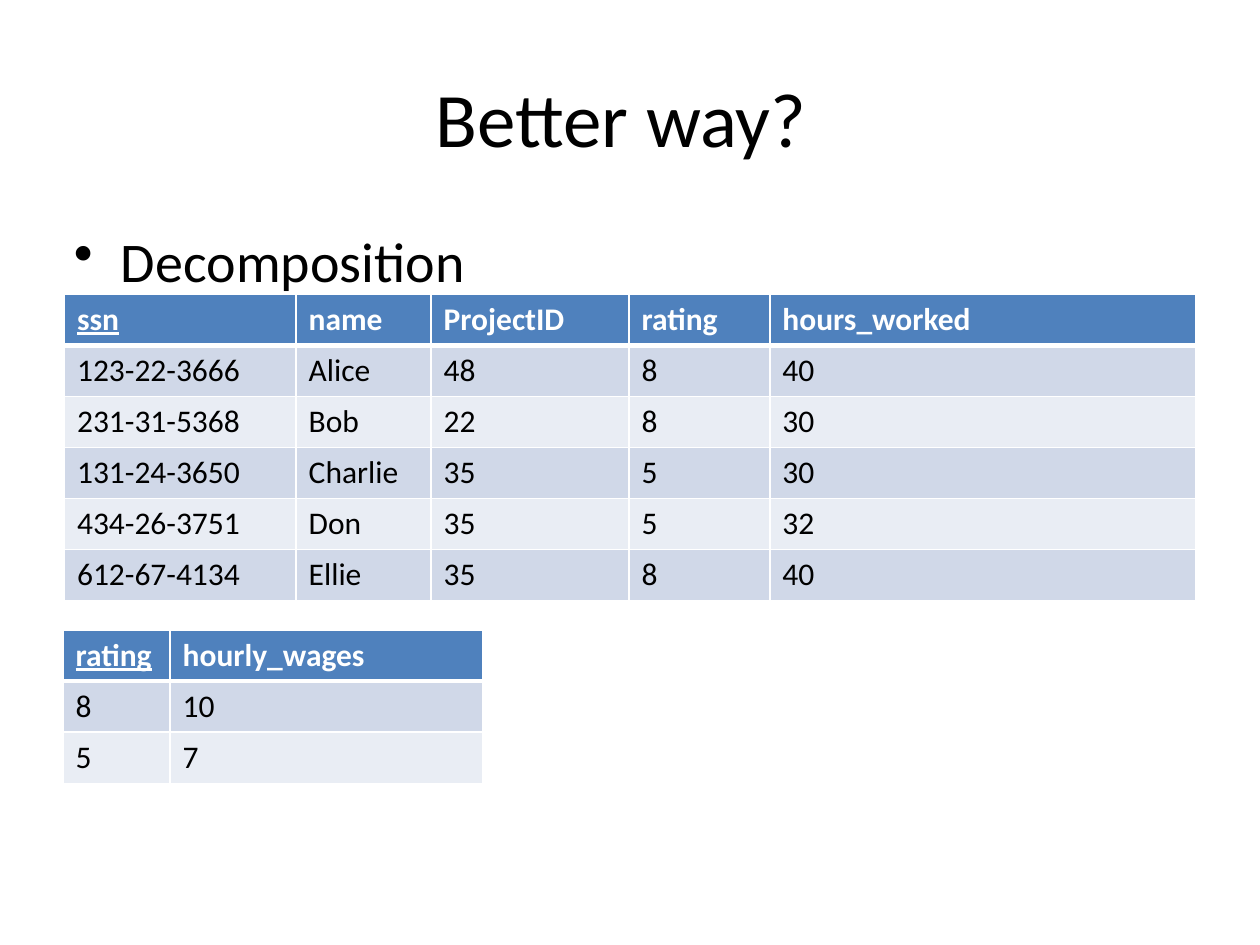
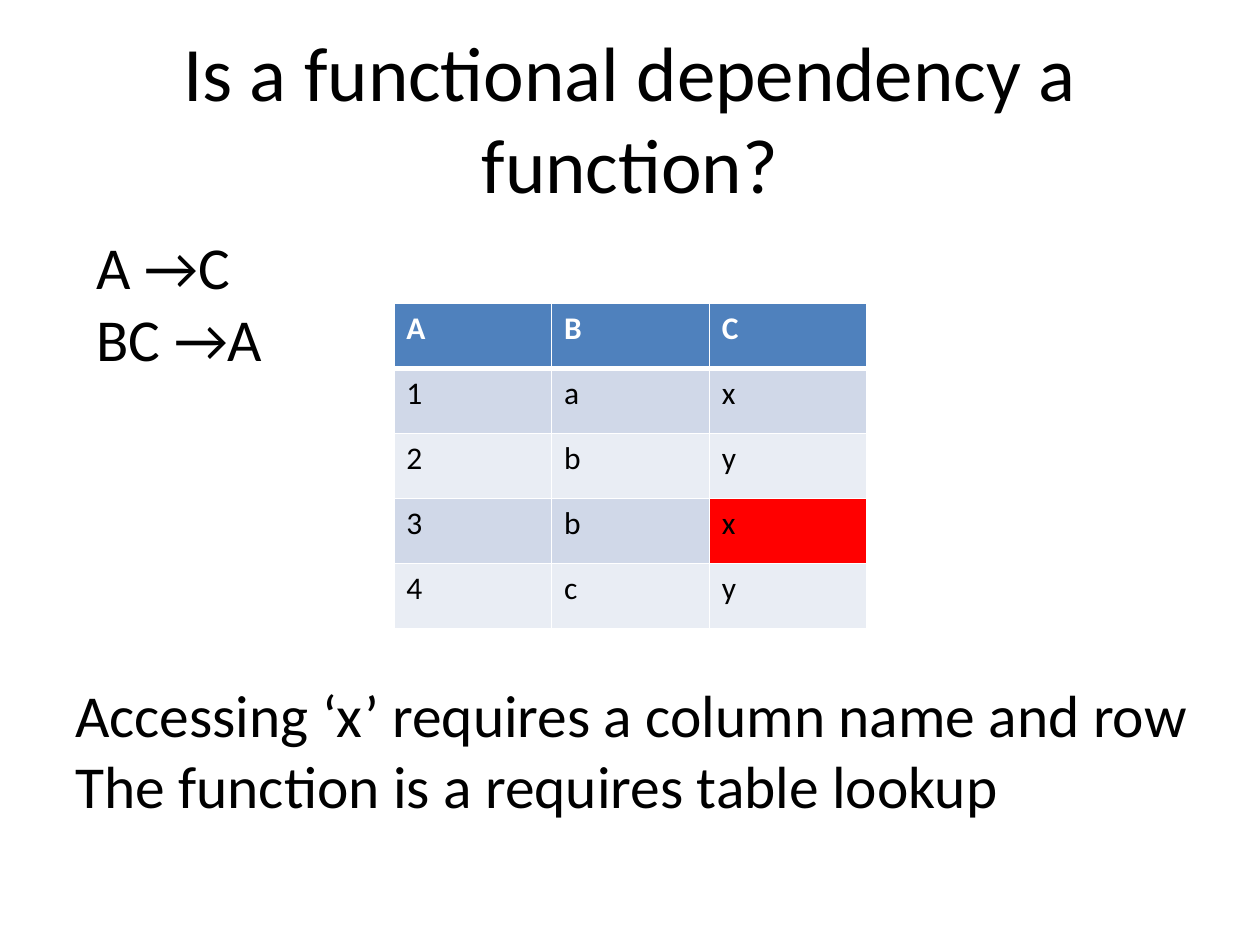
from lxml.etree import SubElement
from pptx import Presentation
from pptx.dml.color import RGBColor
from pptx.enum.text import MSO_ANCHOR, PP_ALIGN
from pptx.oxml import parse_xml
from pptx.oxml.ns import nsdecls, qn
from pptx.util import Cm, Pt

COLORS = {
    "text": "000000",
    "header_text": "FFFFFF",
    "header": "4F81BD",
    "band_dark": "D0D8E8",
    "band_light": "E9EDF4",
    "highlight": "FF0000",
    "border": "FFFFFF",
}


class Deck:
    """Holds the shared style and the current slide."""

    font = "Calibri"
    title_size, bullet_size, text_size, cell_size = 44, 32, 34, 18

    def __init__(self):
        self.presentation = Presentation()
        self.presentation.slide_width = Cm(25.4)
        self.presentation.slide_height = Cm(19.05)
        self.slide = None

    def add_slide(self, title):
        blank = self.presentation.slide_layouts[6]
        self.slide = self.presentation.slides.add_slide(blank)
        frame = self.text((1.27, 0.76, 22.86, 3.18), [title], self.title_size)
        frame.vertical_anchor = MSO_ANCHOR.MIDDLE
        frame.paragraphs[0].alignment = PP_ALIGN.CENTER

    def style(self, paragraph, size, color="text", bold=False):
        paragraph.font.name = self.font
        paragraph.font.size = Pt(size)
        paragraph.font.bold = bold
        paragraph.font.color.rgb = RGBColor.from_string(COLORS[color])

    def text(self, box, lines, size, wrap=True):
        shape = self.slide.shapes.add_textbox(*map(Cm, box))
        frame = shape.text_frame
        frame.word_wrap = wrap
        frame.text = "\n".join(lines)
        for paragraph in frame.paragraphs:
            self.style(paragraph, size)
        return frame

    def bullets(self, box, lines):
        frame = self.text(box, lines, self.bullet_size)
        for paragraph in frame.paragraphs:
            paragraph.space_before = Pt(0.2 * self.bullet_size)
            properties = paragraph._p.get_or_add_pPr()
            indent = Cm(0.95)
            properties.set("marL", str(indent))
            properties.set("indent", str(-indent))
            bullet = parse_xml(f'<a:buChar {nsdecls("a")} char="•"/>')
            properties.insert_element_before(bullet, "a:tabLst", "a:defRPr", "a:extLst")

    def borders(self, cell, row):
        """White grid, with a thicker rule under the header row."""
        widths = {"L": 1, "R": 1, "T": 3 if row == 1 else 1, "B": 3 if row == 0 else 1}
        properties = cell._tc.get_or_add_tcPr()
        for side, width in widths.items():
            line = SubElement(properties, qn(f"a:ln{side}"), w=str(Pt(width)))
            fill = SubElement(line, qn("a:solidFill"))
            SubElement(fill, qn("a:srgbClr"), val=COLORS["border"])

    def table(self, left, top, widths, row_height, rows, key=None, highlight=None):
        """Underlines the header named by key; highlight is a (row, column) pair."""
        frame = self.slide.shapes.add_table(
            len(rows), len(widths), Cm(left), Cm(top),
            Cm(sum(widths)), Cm(row_height * len(rows)))
        table = frame.table
        for column, width in zip(table.columns, widths):
            column.width = Cm(width)
        for row, values in enumerate(rows):
            table.rows[row].height = Cm(row_height)
            header = row == 0
            band = "header" if header else "band_dark" if row % 2 else "band_light"
            for column, value in enumerate(values):
                cell = table.cell(row, column)
                cell.text = value
                paragraph = cell.text_frame.paragraphs[0]
                self.style(paragraph, self.cell_size,
                           "header_text" if header else "text", bold=header)
                if header and value == key:
                    paragraph.font.underline = True
                self.borders(cell, row)
                cell.fill.solid()
                color = "highlight" if (row, column) == highlight else band
                cell.fill.fore_color.rgb = RGBColor.from_string(COLORS[color])


def main():
    deck = Deck()

    # Decomposition into two tables
    deck.add_slide("Better way? ")
    deck.bullets((1.24, 4.45, 22.86, 12.57), ["Decomposition"])
    deck.table(1.3, 5.93, [4.67, 2.72, 3.99, 2.84, 8.59], 1.03, [
        ["ssn", "name", "ProjectID", "rating", "hours_worked"],
        ["123-22-3666", "Alice", "48", "8", "40"],
        ["231-31-5368", "Bob", "22", "8", "30"],
        ["131-24-3650", "Charlie", "35", "5", "30"],
        ["434-26-3751", "Don", "35", "5", "32"],
        ["612-67-4134", "Ellie", "35", "8", "40"],
    ], key="ssn")
    deck.table(1.27, 12.7, [2.16, 6.3], 1.03, [
        ["rating", "hourly_wages"],
        ["8", "10"],
        ["5", "7"],
    ], key="rating")

    # Functional dependency as a lookup
    deck.add_slide("Is a functional dependency a function?")
    deck.table(7.94, 6.12, [3.18] * 3, 1.31, [
        ["A", "B", "C"],
        ["1", "a", "x"],
        ["2", "b", "y"],
        ["3", "b", "x"],
        ["4", "c", "y"],
    ], highlight=(3, 2))
    deck.text((1.27, 13.54, 23.14, 3.18), [
        "Accessing ‘x’ requires a column name and row",
        "The function is a requires table lookup",
    ], deck.text_size, wrap=False)
    deck.text((1.7, 4.52, 3.96, 3.18), ["A →C", "BC →A"], deck.text_size, wrap=False)

    deck.presentation.save("out.pptx")


if __name__ == "__main__":
    main()
